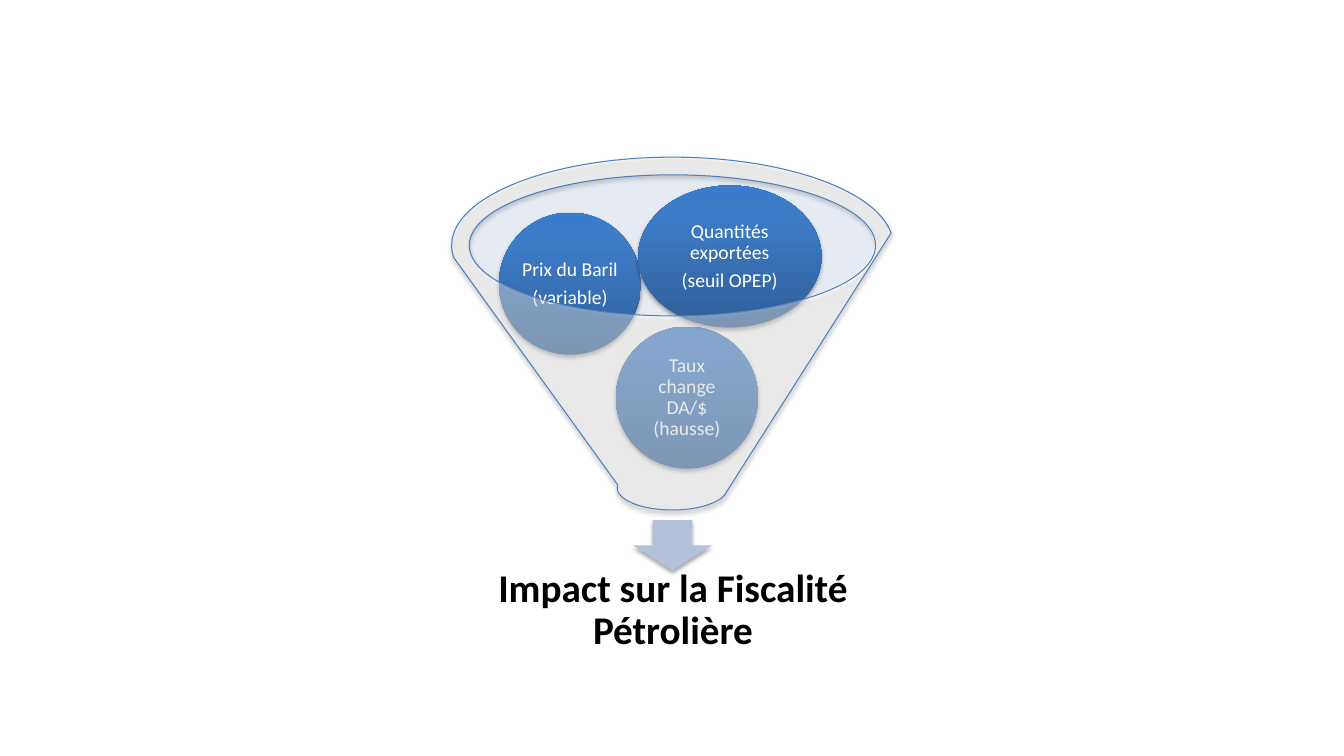
from dataclasses import dataclass

from lxml import etree
from pptx import Presentation
from pptx import util as u
from pptx.dml.color import RGBColor
from pptx.enum import shapes, text
from pptx.oxml import ns

COLORS = {
    "rim": "C2CDE1",
    "arrow": "B3C1DB",
    "ball_bottom": "2F5F99",
    "ball_middle": "3D7CC7",
    "ball_top": "3A7CCB",
    "funnel": "FFFFFF",
    "outline": "4F81BD",
    "light": "FFFFFF",
    "dark": "000000",
}
FONT = "Calibri"
BALL_HEIGHT = 101.5


@dataclass
class Ball:
    lines: list[str]
    left: float
    top: float
    width: float = BALL_HEIGHT


BALLS = [
    Ball(["Taux change DA/$ (hausse)"], 439.9, 233.3),
    Ball(["Prix du Baril", "(variable)"], 356.4, 151.9),
    Ball(["Quantités exportées", "(seuil OPEP)"], 455.8, 132.5, 131),
]


def color(name: str) -> RGBColor:
    return RGBColor.from_string(COLORS[name])


def add_child(parent, tag: str, **attributes):
    return etree.SubElement(parent, ns.qn(tag), attributes)


def add_shape(page, kind, left: float, top: float, width: float, height: float,
              fill: str | None = None, alpha: int | None = None, shadow: bool = True):
    """Add a borderless preset shape, optionally see-through or with a soft shadow."""
    shape = page.shapes.add_shape(kind, *map(u.Pt, (left, top, width, height)))
    shape.line.fill.background()
    shape.shadow.inherit = False
    if fill:
        shape.fill.solid()
        shape.fill.fore_color.rgb = color(fill)
    properties = shape._element.spPr
    if alpha is not None:
        fill_color = properties.find(".//" + ns.qn("a:srgbClr"))
        add_child(fill_color, "a:alpha", val=str(alpha * 1000))
    if shadow:
        effects = properties.find(ns.qn("a:effectLst"))
        outer = add_child(effects, "a:outerShdw", blurRad=str(u.Pt(3.1)),
                          dist=str(u.Pt(1.8)), dir="5400000", rotWithShape="0")
        shade = add_child(outer, "a:srgbClr", val=COLORS["dark"])
        add_child(shade, "a:alpha", val="35000")
    return shape


def write_text(box, lines: list[str], *, size: float, ink: str,
               bold: bool = False, inset: float = 0) -> None:
    """Write centred paragraphs with tight lines and a gap of 35% of the size."""
    frame = box.text_frame
    frame.word_wrap = True
    frame.auto_size = text.MSO_AUTO_SIZE.NONE
    frame.vertical_anchor = text.MSO_ANCHOR.MIDDLE
    frame.margin_left = frame.margin_right = u.Pt(inset)
    frame.margin_top = frame.margin_bottom = u.Pt(inset)
    for index, line in enumerate(lines):
        para = frame.add_paragraph() if index else frame.paragraphs[0]
        para.alignment = text.PP_ALIGN.CENTER
        para.line_spacing = 0.9
        para.space_before = u.Pt(0)
        para.space_after = u.Pt(size * 0.35)
        span = para.add_run()
        span.text = line
        span.font.name = FONT
        span.font.size = u.Pt(size)
        span.font.bold = bold
        span.font.color.rgb = color(ink)


def add_ball(page, ball: Ball) -> None:
    shape = add_shape(page, shapes.MSO_SHAPE.OVAL, ball.left, ball.top,
                      ball.width, BALL_HEIGHT)
    shape.fill.gradient()
    shape.fill.gradient_angle = 90
    stops = shape._element.spPr.find(".//" + ns.qn("a:gsLst"))
    for stop in list(stops):
        stops.remove(stop)
    for name, position in (("ball_bottom", 0), ("ball_middle", 80), ("ball_top", 100)):
        stop = add_child(stops, "a:gs", pos=str(position * 1000))
        add_child(stop, "a:srgbClr", val=COLORS[name])
    write_text(shape, ball.lines, size=14, ink="light", inset=1.4)


def main() -> None:
    deck = Presentation()
    deck.slide_width, deck.slide_height = u.Pt(960), u.Pt(540)
    page = deck.slides.add_slide(deck.slide_layouts[5])

    # Conclusion below the funnel
    title = page.shapes.title
    title.left, title.top = u.Pt(297.4), u.Pt(402.5)
    title.width, title.height = u.Pt(366.5), u.Pt(67.7)
    write_text(title, ["Impact sur la Fiscalité Pétrolière"],
               size=28, ink="dark", bold=True, inset=15.8)

    # Funnel opening and outgoing arrow
    add_shape(page, shapes.MSO_SHAPE.OVAL, 334.1, 124.6, 290.2, 100.8,
              fill="rim", alpha=40, shadow=False)
    add_shape(page, shapes.MSO_SHAPE.DOWN_ARROW, 452.2, 371.5, 56.2, 36, fill="arrow")

    # Factors falling into the funnel
    for ball in BALLS:
        add_ball(page, ball)

    # Translucent funnel in front
    funnel = add_shape(page, shapes.MSO_SHAPE.FUNNEL, 322.6, 112.3, 315.4, 252,
                       fill="funnel", alpha=40)
    funnel.line.color.rgb = color("outline")
    funnel.line.width = u.Pt(0.75)

    deck.save("out.pptx")


if __name__ == "__main__":
    main()
